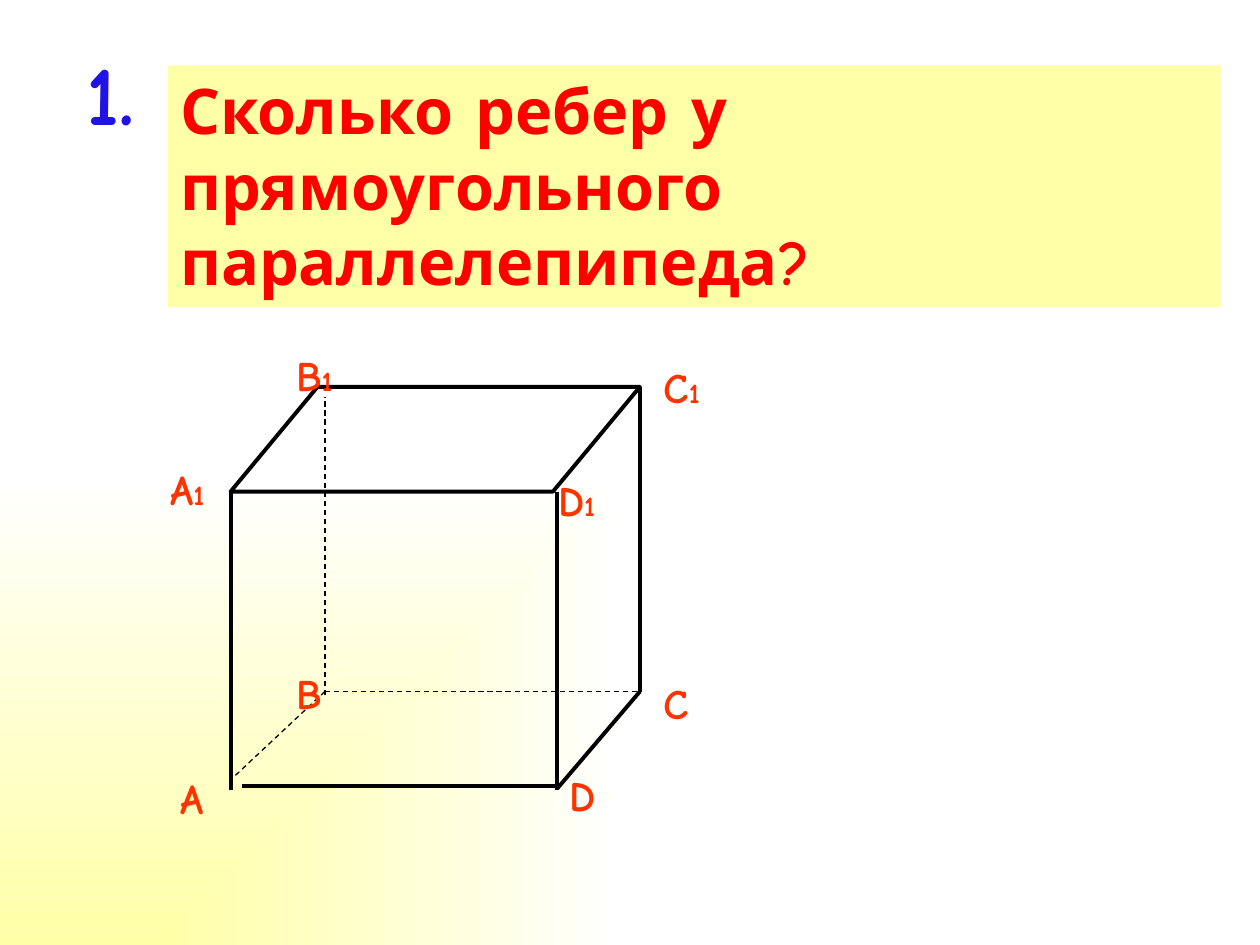
"""Builds a quiz slide asking how many edges a rectangular parallelepiped has."""
import pptx
import pptx.dml.color
import pptx.enum.dml
import pptx.enum.shapes
import pptx.enum.text
import pptx.oxml
import pptx.oxml.ns
import pptx.util
from pptx.util import Cm

FONT = "Comic Neue"
YELLOW = pptx.dml.color.RGBColor(0xFF, 0xFF, 0xA7)
WHITE = pptx.dml.color.RGBColor(0xFF, 0xFF, 0xFF)
BLACK = pptx.dml.color.RGBColor(0, 0, 0)
RED = pptx.dml.color.RGBColor(0xFF, 0, 0)
BLUE = pptx.dml.color.RGBColor(0x21, 0x12, 0xE8)
ORANGE = pptx.dml.color.RGBColor(0xFF, 0x33, 0)

LEFT, BACK_LEFT, RIGHT, BACK_RIGHT = 4.65, 6.55, 11.23, 12.9
TOP_BACK, TOP_FRONT, BASE_BACK, BASE_FRONT = 7.8, 9.91, 13.94, 15.93

VISIBLE_EDGES = [
    (BACK_RIGHT, BASE_BACK, RIGHT, 15.9),
    (4.88, 15.85, RIGHT, 15.85),
    (LEFT, BASE_FRONT, LEFT, TOP_FRONT),
    (RIGHT, BASE_FRONT, RIGHT, TOP_FRONT),
    (BACK_RIGHT, BASE_BACK, BACK_RIGHT, TOP_BACK),
]
HIDDEN_EDGES = [
    (BACK_LEFT, BASE_BACK, BACK_RIGHT, BASE_BACK),
    (BACK_LEFT, BASE_BACK, LEFT, 15.72),
    (BACK_LEFT, 14.02, BACK_LEFT, 8),
]
VERTICES = [
    ("A", "", 3.38, 15.44, 1.27),
    ("D", "", 11.23, 15.39, 1.27),
    ("B", "", 5.72, 13.34, 1.27),
    ("C", "", 13.13, 13.54, 1.27),
    ("A", "1", 3.18, 9.22, 1.7),
    ("D", "1", 11, 9.45, 1.48),
    ("B", "1", 5.72, 6.93, 1.48),
    ("C", "1", 13.13, 7.16, 1.7),
]


def paint_background(slide):
    fill = slide.background.fill
    fill.gradient()
    for stop, color in zip(fill.gradient_stops, (YELLOW, WHITE)):
        stop.color.rgb = color
    linear = slide.element.find(".//" + pptx.oxml.ns.qn("a:lin"))
    corner = pptx.oxml.parse_xml(
        f'<a:path {pptx.oxml.ns.nsdecls("a")} path="rect">'
        '<a:fillToRect t="100000" r="100000"/></a:path>')
    linear.getparent().replace(linear, corner)


def write(holder, runs, color):
    frame = holder.text_frame
    frame.word_wrap = True
    frame.auto_size = pptx.enum.text.MSO_AUTO_SIZE.SHAPE_TO_FIT_TEXT
    frame.vertical_anchor = pptx.enum.text.MSO_ANCHOR.TOP
    paragraph = frame.paragraphs[0]
    paragraph.alignment = pptx.enum.text.PP_ALIGN.LEFT
    for text, size in runs:
        run = paragraph.add_run()
        run.text = text
        run.font.name = FONT
        run.font.size = pptx.util.Pt(size)
        run.font.bold = True
        run.font.color.rgb = color


def add_label(slide, box, runs, color):
    label = slide.shapes.add_textbox(*map(Cm, box))
    write(label, runs, color)


def add_preset(slide, preset, box):
    preset_shape = slide.shapes.add_shape(preset, *map(Cm, box))
    preset_shape.shadow.inherit = False
    return preset_shape


def add_question(slide, text):
    question = add_preset(slide, pptx.enum.shapes.MSO_SHAPE.RECTANGLE,
                          (3.38, 1.32, 21.23, 4.88))
    question.fill.solid()
    question.fill.fore_color.rgb = YELLOW
    question.line.fill.background()
    write(question, [(text, 36)], RED)


def add_top_face(slide):
    face = add_preset(slide, pptx.enum.shapes.MSO_SHAPE.PARALLELOGRAM,
                      (LEFT, TOP_BACK, BACK_RIGHT - LEFT, TOP_FRONT - TOP_BACK))
    face.adjustments[0] = 0.83
    face.fill.background()
    face.line.color.rgb = BLACK
    face.line.width = pptx.util.Pt(2.25)


def add_edge(slide, ends, hidden):
    edge = slide.shapes.add_connector(
        pptx.enum.shapes.MSO_CONNECTOR.STRAIGHT, *map(Cm, ends))
    edge.line.color.rgb = BLACK
    edge.line.width = pptx.util.Pt(0.75 if hidden else 2.25)
    if hidden:
        edge.line.dash_style = pptx.enum.dml.MSO_LINE.DASH
    edge.element.spPr.append(pptx.oxml.parse_xml(
        f'<a:effectLst {pptx.oxml.ns.nsdecls("a")}/>'))


def main():
    deck = pptx.Presentation()
    deck.slide_width, deck.slide_height = Cm(25.4), Cm(19.05)
    slide = deck.slides.add_slide(deck.slide_layouts[6])
    paint_background(slide)
    add_question(slide, "Сколько ребер у прямоугольного параллелепипеда?")
    add_label(slide, (1.5, 0.71, 3.2, 2.29), [("1.", 48)], BLUE)
    add_top_face(slide)
    for ends in HIDDEN_EDGES:
        add_edge(slide, ends, hidden=True)
    for ends in VISIBLE_EDGES:
        add_edge(slide, ends, hidden=False)
    for letter, index, left, top, width in VERTICES:
        runs = [(letter, 24)] + ([(index, 16)] if index else [])
        add_label(slide, (left, top, width, 1.27), runs, ORANGE)
    deck.save("out.pptx")


if __name__ == "__main__":
    main()
